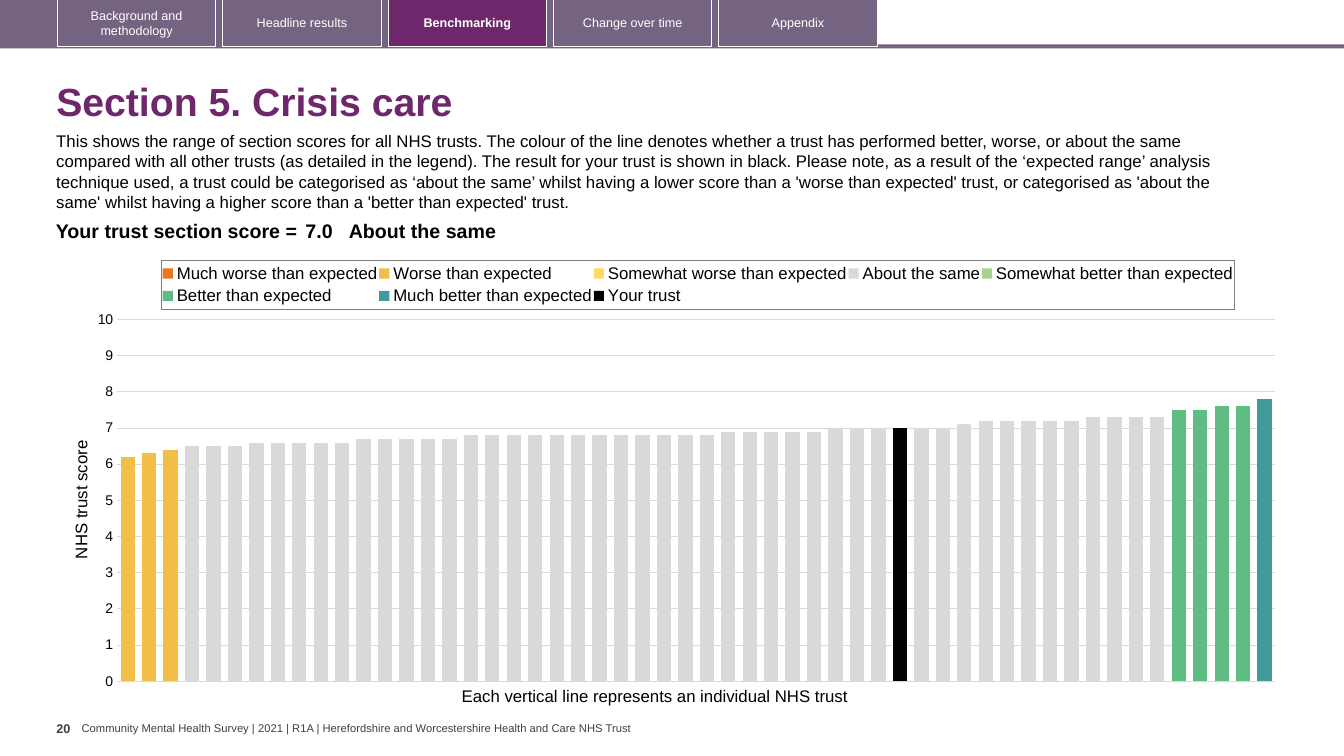
from copy import deepcopy
from dataclasses import dataclass
from typing import Optional

from lxml import etree
from pptx import Presentation
from pptx.chart.data import CategoryChartData
from pptx.dml.color import RGBColor
from pptx.enum.chart import XL_CHART_TYPE, XL_LEGEND_POSITION, XL_TICK_MARK
from pptx.enum.shapes import MSO_SHAPE
from pptx.enum.text import MSO_ANCHOR, PP_ALIGN
from pptx.oxml import parse_xml
from pptx.oxml.ns import nsdecls, qn
from pptx.util import Inches, Pt

COLUMN = XL_CHART_TYPE.COLUMN_CLUSTERED
LEGEND_TOP = XL_LEGEND_POSITION.TOP
TICK_NONE = XL_TICK_MARK.NONE
RECT = MSO_SHAPE.RECTANGLE
TOP, MIDDLE = MSO_ANCHOR.TOP, MSO_ANCHOR.MIDDLE
LEFT, CENTER, RIGHT = PP_ALIGN.LEFT, PP_ALIGN.CENTER, PP_ALIGN.RIGHT

FONT = "Arial"
COLORS = {
    "bar": "756382", "plum": "6D276A", "white": "FFFFFF", "black": "000000",
    "footer": "404040", "grid": "D9D9D9", "frame": "7F7F7F",
}
TRUSTS = 54
CHART_W, CHART_H = 12.15, 4.44


@dataclass
class Tab:
    label: str
    active: bool = False


@dataclass
class Band:
    name: str
    color: str
    first: int = 1
    scores: tuple[float, ...] = ()

    def values(self) -> list[Optional[float]]:
        before = [None] * (self.first - 1)
        after = [None] * (TRUSTS - len(before) - len(self.scores))
        return [*before, *self.scores, *after]


TABS = [
    Tab("Background and methodology"), Tab("Headline results"),
    Tab("Benchmarking", active=True), Tab("Change over time"), Tab("Appendix"),
]
SAME_SCORES = (
    *[6.5] * 3, *[6.6] * 5, *[6.7] * 5, *[6.8] * 12, *[6.9] * 5,
    *[7.0] * 6, 7.1, *[7.2] * 5, *[7.3] * 4,
)
BANDS = [
    Band("Much worse than expected", "E87722"),
    Band("Worse than expected", "F1BE48", 1, (6.2, 6.3, 6.4)),
    Band("Somewhat worse than expected", "FFD966"),
    Band("About the same", "D9D9D9", 4, SAME_SCORES),
    Band("Somewhat better than expected", "A9D18E"),
    Band("Better than expected", "5FBD83", 50, (7.5, 7.5, 7.6, 7.6)),
    Band("Much better than expected", "419999", 54, (7.8,)),
    Band("Your trust", "000000", 37, (7.0,)),
]
INTRO = (
    "This shows the range of section scores for all NHS trusts. The colour of the line "
    "denotes whether a trust has performed better, worse, or about the same compared with "
    "all other trusts (as detailed in the legend). The result for your trust is shown in "
    "black. Please note, as a result of the ‘expected range’ analysis technique used, a "
    "trust could be categorised as ‘about the same’ whilst having a lower score than a "
    "'worse than expected' trust, or categorised as 'about the same' whilst having a higher "
    "score than a 'better than expected' trust."
)


def rgb(key: str) -> RGBColor:
    return RGBColor.from_string(COLORS[key])


def style_font(font, size: float, color: str = "black", bold: bool = False) -> None:
    font.name, font.size, font.bold = FONT, Pt(size), bold
    font.color.rgb = rgb(color)


def write(tf, text: str, *, size: float, color: str = "black", bold: bool = False,
          align=LEFT, anchor=TOP, inset: Optional[tuple[float, float]] = None,
          spacing: Optional[float] = None) -> None:
    tf.word_wrap, tf.vertical_anchor = True, anchor
    if inset is not None:
        tf.margin_left = tf.margin_right = Inches(inset[0])
        tf.margin_top = tf.margin_bottom = Inches(inset[1])
    p = tf.paragraphs[0]
    p.alignment = align
    if spacing:
        p.line_spacing = spacing
    r = p.add_run()
    r.text = text
    style_font(r.font, size, color, bold)


def add_text(s, box: tuple[float, ...], text: str, **fmt) -> None:
    write(s.shapes.add_textbox(*map(Inches, box)).text_frame, text, **fmt)


def add_rect(s, box: tuple[float, ...], fill: Optional[str], line: Optional[str] = None):
    sp = s.shapes.add_shape(RECT, *map(Inches, box))
    sp.shadow.inherit = False
    if fill:
        sp.fill.solid()
        sp.fill.fore_color.rgb = rgb(fill)
    else:
        sp.fill.background()
    if line:
        sp.line.color.rgb = rgb(line)
        sp.line.width = Pt(0.75)
    else:
        sp.line.fill.background()
    return sp


def place(part, after: str = "", inner: bool = False, **inches: float) -> None:
    """Fix a chart part at x, y, w, h, given in inches within the chart."""
    for old in part.findall(qn("c:layout")):
        part.remove(old)
    layout = etree.Element(qn("c:layout"))
    manual = etree.SubElement(layout, qn("c:manualLayout"))
    settings = {"layoutTarget": "inner"} if inner else {}
    settings |= {"xMode": "edge", "yMode": "edge"}
    for key, value in inches.items():
        settings[key] = f"{value / (CHART_W if key in 'xw' else CHART_H):.4f}"
    for key, value in settings.items():
        etree.SubElement(manual, qn(f"c:{key}")).set("val", value)
    part.insert(part.index(part.find(qn(after))) + 1 if after else 0, layout)


def move_last_to_right_axis(area) -> None:
    """Draw the last series against a second, unlabelled value axis."""
    bars, cat, val = (area.find(qn(f"c:{tag}")) for tag in ("barChart", "catAx", "valAx"))
    own = deepcopy(bars)
    for ser in own.findall(qn("c:ser"))[:-1]:
        own.remove(ser)
    bars.remove(bars.findall(qn("c:ser"))[-1])
    bars.addnext(own)
    right_val, right_cat = deepcopy(val), deepcopy(cat)
    val.addnext(right_val)
    right_val.addnext(right_cat)
    for tag in ("title", "majorGridlines"):
        right_val.remove(right_val.find(qn(f"c:{tag}")))
    ids = {cat.find(qn("c:axId")).get("val"): "5001", val.find(qn("c:axId")).get("val"): "5002"}
    for part in (own, right_val, right_cat):
        for ref in part.iter(qn("c:axId"), qn("c:crossAx")):
            ref.set("val", ids[ref.get("val")])
    for tag, value in (("axPos", "r"), ("majorTickMark", "out"),
                       ("tickLblPos", "none"), ("crosses", "max")):
        right_val.find(qn(f"c:{tag}")).set("val", value)


def add_score_chart(s) -> None:
    data = CategoryChartData()
    data.categories = [str(n) for n in range(1, TRUSTS + 1)]
    for band in BANDS:
        data.add_series(band.name, band.values())
    box = map(Inches, (0.67, 2.47, CHART_W, CHART_H))
    chart = s.shapes.add_chart(COLUMN, *box, data).chart
    chart.has_title = False
    style_font(chart.font, 10)

    plot = chart.plots[0]
    plot.gap_width, plot.overlap, plot.vary_by_categories = 50, 100, False
    for series, band in zip(plot.series, BANDS):
        series.format.fill.solid()
        series.format.fill.fore_color.rgb = RGBColor.from_string(band.color)
    area = chart.element.find(".//" + qn("c:plotArea"))
    place(area, inner=True, x=0.49, y=0.7, w=11.49, h=3.59)

    chart.category_axis.visible = False
    axis = chart.value_axis
    axis.minimum_scale, axis.maximum_scale, axis.major_unit = 0, 10, 1
    axis.major_tick_mark = axis.minor_tick_mark = TICK_NONE
    axis.tick_labels.number_format = "0"
    axis.tick_labels.number_format_is_linked = False
    style_font(axis.tick_labels.font, 10)
    axis.format.line.fill.background()
    axis.major_gridlines.format.line.color.rgb = rgb("grid")
    axis.major_gridlines.format.line.width = Pt(0.75)
    title = axis.axis_title.text_frame
    title.text = "NHS trust score"
    style_font(title.paragraphs[0].runs[0].font, 12)
    place(area.find(qn("c:valAx")).find(qn("c:title")), "c:tx", x=0, y=1.87)
    move_last_to_right_axis(area)

    chart.has_legend = True
    legend = chart.legend
    legend.position, legend.include_in_layout = LEGEND_TOP, False
    style_font(legend.font, 12)
    box_xml = chart.element.find(".//" + qn("c:legend"))
    place(box_xml, "c:legendPos", x=0.93, y=0.11, w=10.65, h=0.49)
    box_xml.find(qn("c:txPr")).addprevious(parse_xml(
        f'<c:spPr {nsdecls("c", "a")}><a:ln w="9525"><a:solidFill>'
        f'<a:srgbClr val="{COLORS["frame"]}"/></a:solidFill></a:ln></c:spPr>'))


def add_score_line(s) -> None:
    box = map(Inches, (0.36, 2.15, 11.69, 0.31))
    table = s.shapes.add_table(1, 3, *box).table
    table.first_row = table.horz_banding = False
    cells = [("Your trust section score =", 2.63, RIGHT, 0.04),
             ("7.0", 0.47, LEFT, 0.04), ("About the same", 8.59, LEFT, 0)]
    for col, (text, width, align, side) in enumerate(cells):
        table.columns[col].width = Inches(width)
        cell = table.cell(0, col)
        cell.fill.background()
        cell.margin_left = cell.margin_right = Inches(side)
        cell.margin_top = cell.margin_bottom = Inches(0.04)
        write(cell.text_frame, text, size=14, bold=True, align=align)


def main() -> None:
    prs = Presentation()
    prs.slide_width, prs.slide_height = Inches(13.33), Inches(7.5)
    s = prs.slides.add_slide(prs.slide_layouts[6])

    # Navigation tabs
    add_rect(s, (0, 0.44, 13.33, 0.04), "bar")
    add_rect(s, (0, 0, 8.7, 0.47), "bar")
    for i, tab in enumerate(TABS):
        sp = add_rect(s, (0.57 + 1.64 * i, -0.01, 1.57, 0.47),
                      "plum" if tab.active else None, "white")
        write(sp.text_frame, tab.label, size=9, color="white", bold=tab.active,
              align=CENTER, anchor=MIDDLE)

    # Heading and introduction
    add_text(s, (0.46, 0.67, 12.49, 0.72), "Section 5. Crisis care", size=28,
             color="plum", bold=True, anchor=MIDDLE, spacing=0.9)
    add_text(s, (0.46, 1.25, 12.13, 0.91), INTRO, size=12)

    # Scores
    add_score_chart(s)
    add_score_line(s)
    add_text(s, (4.48, 6.75, 4.11, 0.3),
             "Each vertical line represents an individual NHS trust", size=12)

    # Footer
    add_text(s, (0.56, 7.1, 0.25, 0.4), "20", size=9, color="footer", bold=True,
             inset=(0, 0.05))
    add_text(s, (0.81, 7.16, 5.53, 0.13), "Community Mental Health Survey | 2021 | R1A | "
             "Herefordshire and Worcestershire Health and Care NHS Trust",
             size=8, color="footer", anchor=MIDDLE, inset=(0, 0))
    prs.save("out.pptx")


if __name__ == "__main__":
    main()
